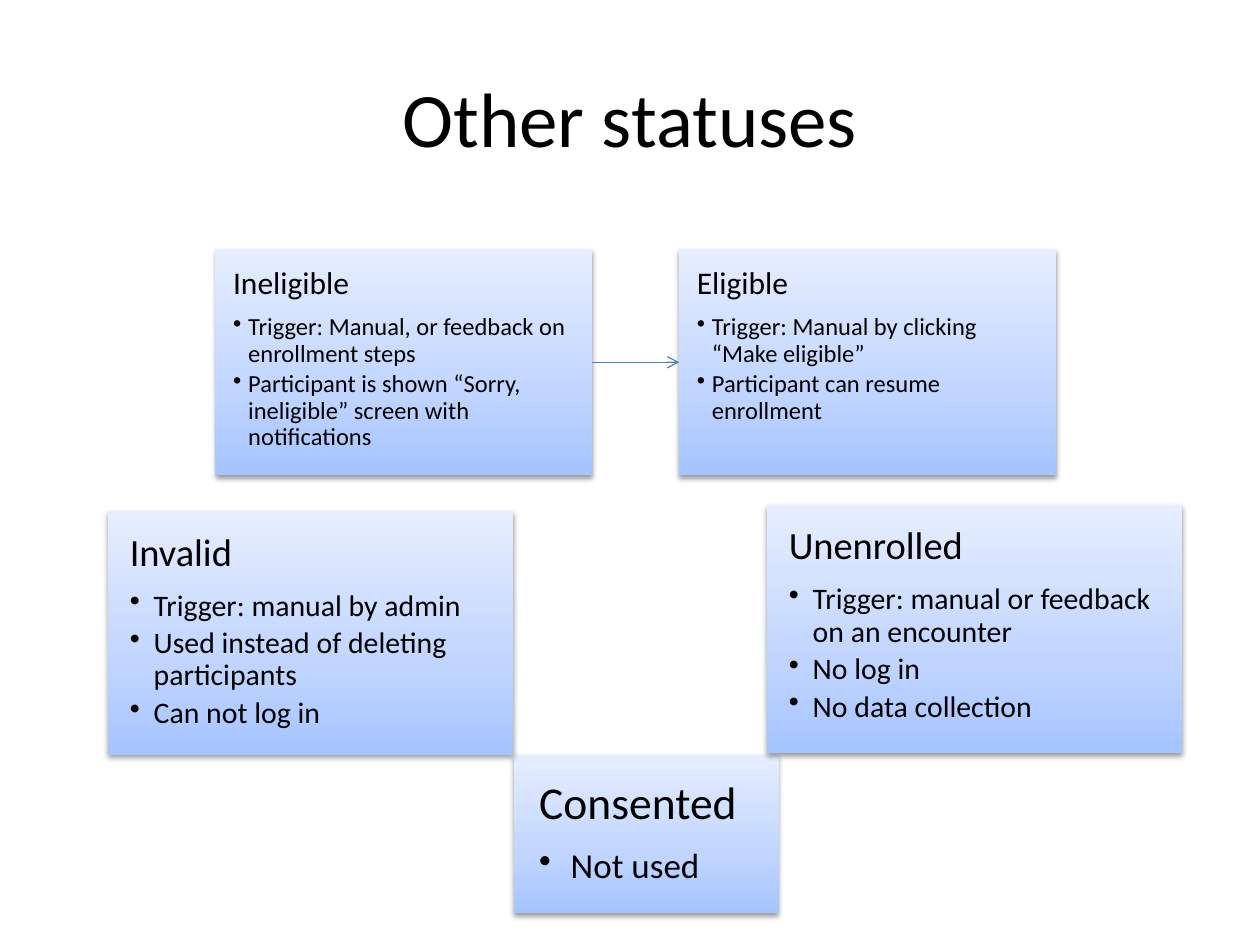
"""Build the slide that shows the other participant statuses."""
from lxml.etree import SubElement
from copy import deepcopy
from pptx import Presentation
from pptx.dml.color import RGBColor
from pptx.enum.shapes import MSO_CONNECTOR as CONNECTOR, MSO_SHAPE as SHAPE
from pptx.enum.text import MSO_ANCHOR as ANCHOR, PP_ALIGN as ALIGN
from pptx.oxml.ns import qn
from pptx.util import Inches, Pt


def rgb(value):
    return RGBColor.from_string(value)


def write(frame, text, size=18, align=ALIGN.LEFT, spacing=None, after=0, indent=0):
    first = frame.paragraphs[0]
    paragraph = first if not first.runs else frame.add_paragraph()
    if indent:
        properties = paragraph._p.get_or_add_pPr()
        properties.set("marL", str(Inches(indent)))
        properties.set("indent", str(-Inches(indent)))
        SubElement(properties, qn("a:buChar"), char="•")
    paragraph.alignment = align
    paragraph.line_spacing = spacing
    paragraph.space_after = Pt(after)
    run = paragraph.add_run()
    run.text = text
    run.font.name = "Calibri"
    run.font.size = Pt(size)
    run.font.color.rgb = rgb("000000")


GRADIENT = [(0, "A4C4FF"), (0.35, "BFD4FF"), (1, "E6EEFF")]
# left, top, width, height, inset, heading size, bullet size, indent
STATUSES = {
    "Consented": ((4.08, 5.99, 2.1, 1.26), 0.2, 26, 20, 0.25, ["Not used"]),
    "Ineligible": ((1.71, 1.98, 2.99, 1.79), 0.14, 18, 14, 0.12, [
        "Trigger: Manual, or feedback on enrollment steps",
        "Participant is shown “Sorry, ineligible” screen with notifications"]),
    "Eligible": ((5.39, 1.98, 2.99, 1.79), 0.14, 18, 14, 0.12, [
        "Trigger: Manual by clicking “Make eligible”",
        "Participant can resume enrollment"]),
    "Invalid": ((0.86, 4.06, 3.21, 1.93), 0.17, 22, 17, 0.19, [
        "Trigger: manual by admin",
        "Used instead of deleting participants",
        "Can not log in"]),
    "Unenrolled": ((6.09, 4.01, 3.29, 1.97), 0.17, 22, 17, 0.19, [
        "Trigger: manual or feedback on an encounter",
        "No log in",
        "No data collection"]),
}

prs = Presentation()
prs.slide_width, prs.slide_height = Inches(10), Inches(7.5)
slide = prs.slides.add_slide(prs.slide_layouts[6])

title = slide.shapes.add_textbox(Inches(0.5), Inches(0.3), Inches(9), Inches(1.25)).text_frame
title.word_wrap = True
title.vertical_anchor = ANCHOR.MIDDLE
write(title, "Other statuses", size=44, align=ALIGN.CENTER)

boxes = {}
for status, (place, inset, heading_size, bullet_size, indent, bullets) in STATUSES.items():
    box = slide.shapes.add_shape(SHAPE.RECTANGLE, *map(Inches, place))
    boxes[status] = box
    box.line.fill.background()
    box.fill.gradient()
    box.fill.gradient_angle = 90
    stops = box._element.spPr.find(".//" + qn("a:gsLst"))
    stops.append(deepcopy(stops[0]))
    for stop, (position, color) in zip(box.fill.gradient_stops, GRADIENT):
        stop.position = position
        stop.color.rgb = rgb(color)

    box.shadow.inherit = False
    effects = box._element.spPr.find(qn("a:effectLst"))
    shadow = SubElement(effects, qn("a:outerShdw"), blurRad=str(Pt(3.1)),
                        dist=str(Pt(1.6)), dir="5400000", rotWithShape="0")
    shade = SubElement(shadow, qn("a:srgbClr"), val="000000")
    SubElement(shade, qn("a:alpha"), val="38000")

    frame = box.text_frame
    frame.word_wrap = True
    frame.vertical_anchor = ANCHOR.TOP
    frame.margin_left = frame.margin_right = Inches(inset)
    frame.margin_top = frame.margin_bottom = Inches(inset)
    write(frame, status, size=heading_size, spacing=0.9, after=round(heading_size * 0.42, 1))
    for bullet in bullets:
        write(frame, bullet, size=bullet_size, spacing=0.9,
              after=round(bullet_size * 0.18, 1), indent=indent)

arrow = slide.shapes.add_connector(CONNECTOR.STRAIGHT, 0, 0, 0, 0)
arrow.begin_connect(boxes["Ineligible"], 3)
arrow.end_connect(boxes["Eligible"], 1)
arrow.line.color.rgb = rgb("4F81BD")
arrow.line.width = Pt(0.75)
SubElement(arrow.line._get_or_add_ln(), qn("a:tailEnd"), type="arrow")
SubElement(arrow._element.spPr, qn("a:effectLst"))

prs.save("out.pptx")
